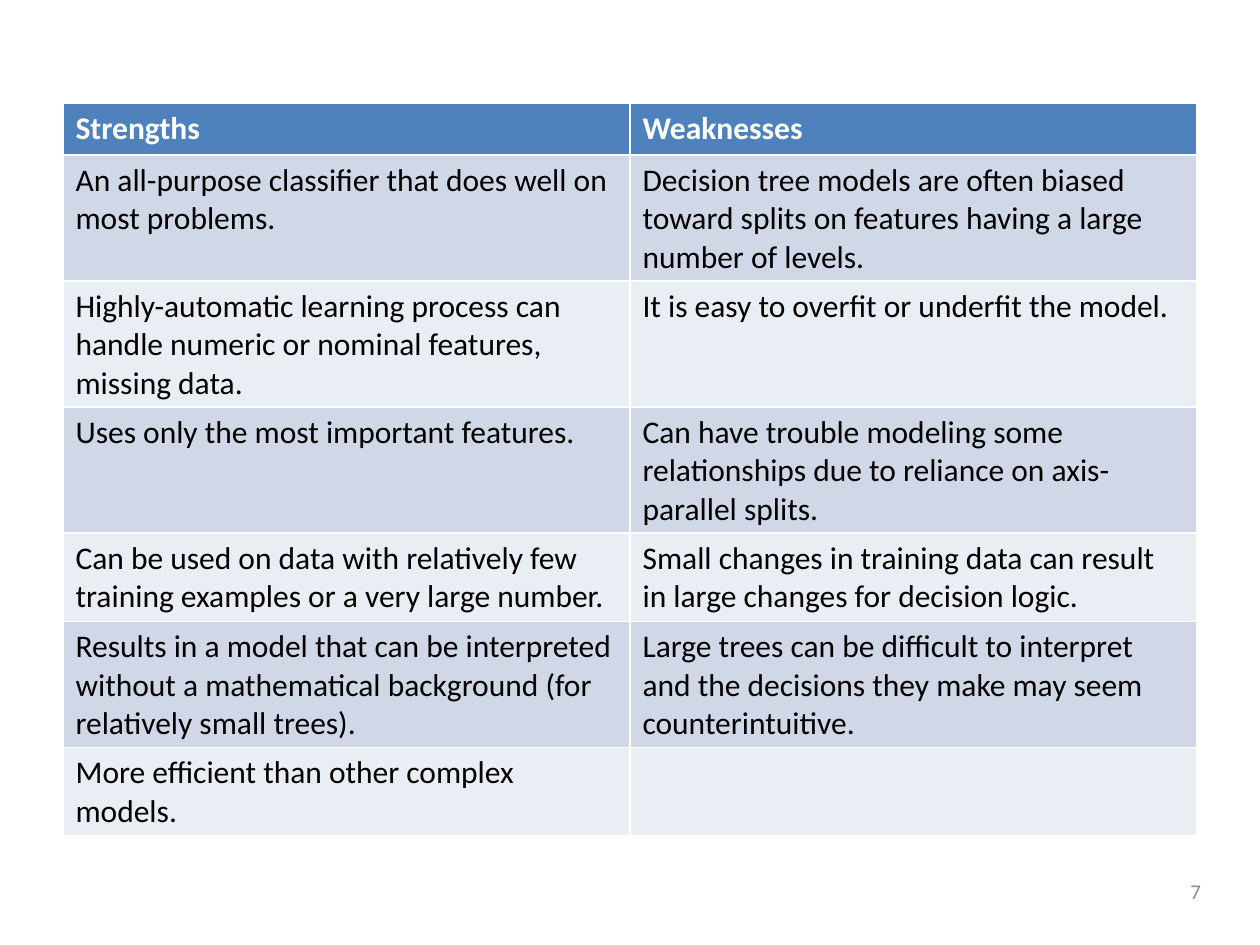
from pptx import Presentation
from pptx.dml.color import RGBColor
from pptx.enum.text import MSO_ANCHOR, PP_ALIGN
from pptx.util import Inches, Pt

FONT = "Calibri"
WHITE = RGBColor(0xFF, 0xFF, 0xFF)
BLACK = RGBColor(0x00, 0x00, 0x00)
GREY = RGBColor(0x8C, 0x8C, 0x8C)
HEADER_BLUE = RGBColor(0x4F, 0x81, 0xBD)
BAND_DARK = RGBColor(0xD0, 0xD8, 0xE8)
BAND_LIGHT = RGBColor(0xE9, 0xED, 0xF4)

COLUMN_WIDTH = 4.5
ROW_HEIGHT = 0.41  # minimum; rows grow with their text

COMPARISON = [
    ("Strengths", "Weaknesses"),
    ("An all-purpose classifier that does well on most problems.",
     "Decision tree models are often biased toward splits on features "
     "having a large number of levels."),
    ("Highly-automatic learning process can handle numeric or nominal "
     "features, missing data.",
     "It is easy to overfit or underfit the model."),
    ("Uses only the most important features.",
     "Can have trouble modeling some relationships due to reliance on "
     "axis-parallel splits."),
    ("Can be used on data with relatively few training examples or a very "
     "large number.",
     "Small changes in training data can result in large changes for "
     "decision logic."),
    ("Results in a model that can be interpreted without a mathematical "
     "background (for relatively small trees).",
     "Large trees can be difficult to interpret and the decisions they make "
     "may seem counterintuitive."),
    ("More efficient than other complex models.", ""),
]


def write(frame, text, size, color, bold=False):
    paragraph = frame.paragraphs[0]
    paragraph.text = text
    font = paragraph.font
    font.name, font.size, font.bold = FONT, Pt(size), bold
    font.color.rgb = color
    return paragraph


def row_fill(row):
    if row == 0:
        return HEADER_BLUE
    return BAND_DARK if row % 2 else BAND_LIGHT


def add_comparison(slide, rows, left, top):
    # The default table style supplies the white cell borders
    row_count, column_count = len(rows), len(rows[0])
    table = slide.shapes.add_table(
        row_count, column_count, Inches(left), Inches(top),
        Inches(column_count * COLUMN_WIDTH),
        Inches(row_count * ROW_HEIGHT)).table
    for r, entries in enumerate(rows):
        is_header = r == 0
        for c, entry in enumerate(entries):
            cell = table.cell(r, c)
            cell.fill.solid()
            cell.fill.fore_color.rgb = row_fill(r)
            write(cell.text_frame, entry, 18,
                  WHITE if is_header else BLACK, bold=is_header)


def add_page_number(slide, number):
    frame = slide.shapes.add_textbox(
        Inches(7.3), Inches(6.87), Inches(2.33), Inches(0.4)).text_frame
    frame.word_wrap = True
    frame.vertical_anchor = MSO_ANCHOR.MIDDLE
    write(frame, number, 12, GREY).alignment = PP_ALIGN.RIGHT


def main():
    deck = Presentation()
    deck.slide_width, deck.slide_height = Inches(10), Inches(7.5)
    slide = deck.slides.add_slide(deck.slide_layouts[6])  # blank layout
    add_page_number(slide, "7")
    add_comparison(slide, COMPARISON, left=0.5, top=0.82)
    deck.save("out.pptx")


if __name__ == "__main__":
    main()
